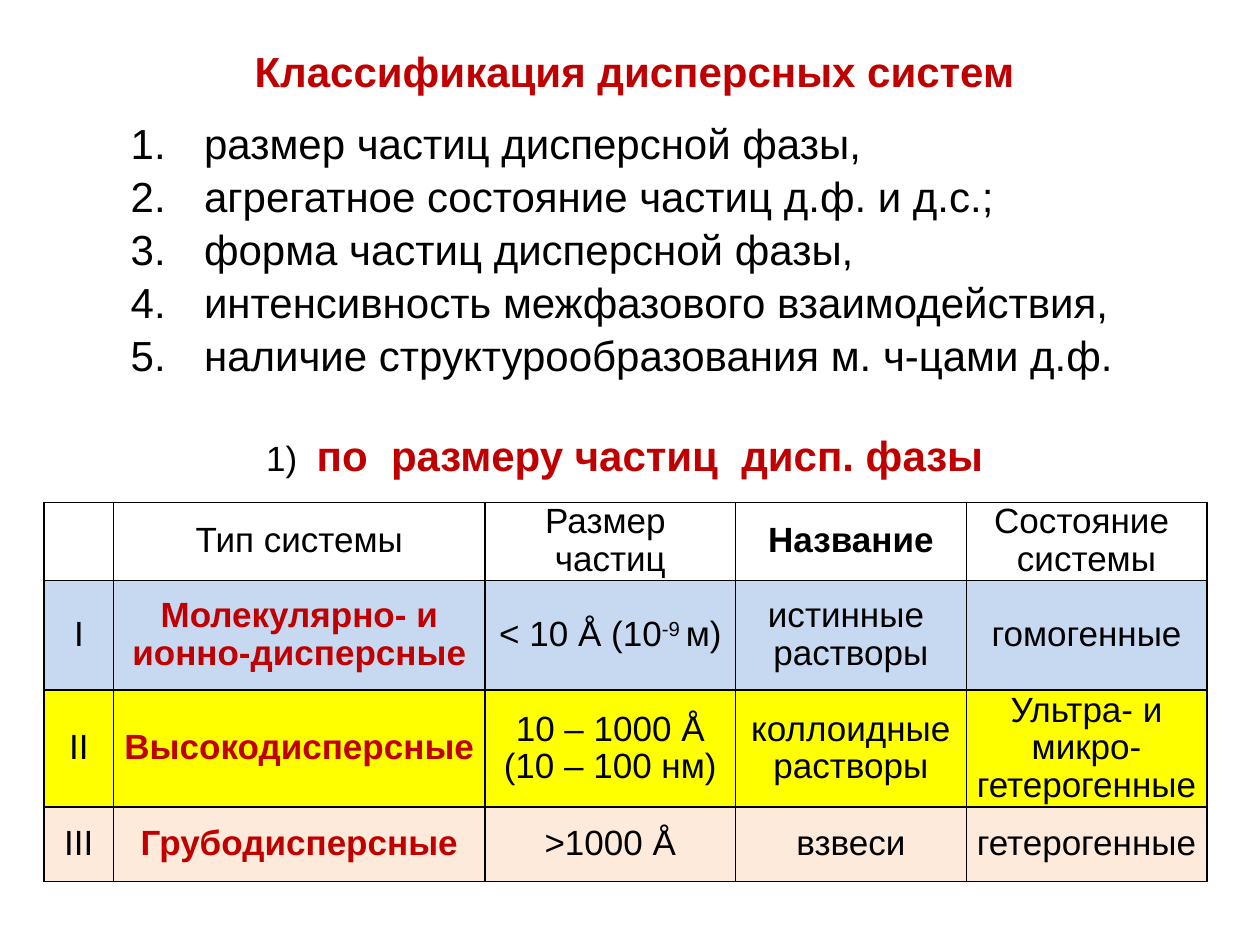
import pptx
import pptx.dml.color
import pptx.enum.text
import pptx.oxml
import pptx.oxml.ns
import pptx.util

Cm = pptx.util.Cm
Pt = pptx.util.Pt
ALIGN = pptx.enum.text.PP_ALIGN
ANCHOR = pptx.enum.text.MSO_ANCHOR
NS = pptx.oxml.ns.nsdecls("a")
RED, BLACK = "C00000", "000000"

LIST = [
    "размер частиц дисперсной фазы, ",
    "агрегатное состояние частиц д.ф. и д.с.;",
    "форма частиц дисперсной фазы, ",
    "интенсивность межфазового взаимодействия, ",
    "наличие структурообразования м. ч-цами д.ф.",
]
WIDTHS = [1.4, 7.49, 5.05, 4.65, 4.85]
ROWS = [
    (1.57, None, ["", "Тип системы", "Размер \nчастиц", "Название",
                  "Состояние \nсистемы"]),
    (2.21, "C6D9F1", ["Ι", "Молекулярно- и ионно-дисперсные",
                      "< 10 Å (10^-9 ^м)", "истинные \nрастворы", "гомогенные"]),
    (2.36, "FFFF00", ["ΙΙ", "Высокодисперсные", "10 – 1000 Å\n(10 – 100 нм)",
                      "коллоидные растворы", "Ультра- и микро-гетерогенные"]),
    (1.5, "FDEADA", ["ΙΙΙ", "Грубодисперсные", ">1000 Å", "взвеси",
                     "гетерогенные"]),
]


def color(code):
    return pptx.dml.color.RGBColor.from_string(code)


def add_run(para, text, size, hue=BLACK, bold=False, sup=False):
    run = para.add_run()
    run.text = text
    font = run.font
    font.name, font.size, font.bold = "Arial", Pt(size), bold
    font.color.rgb = color(hue)
    if sup:
        font._element.set("baseline", "30000")


def place(shape, left, top, width, height):
    shape.left, shape.top = Cm(left), Cm(top)
    shape.width, shape.height = Cm(width), Cm(height)
    frame = shape.text_frame
    frame.word_wrap = True
    frame.auto_size = pptx.enum.text.MSO_AUTO_SIZE.NONE
    frame.vertical_anchor = ANCHOR.TOP
    return frame


def add_title(slide):
    para = place(slide.shapes.title, 0.89, 0.79, 23.8, 1.3).paragraphs[0]
    para.alignment = ALIGN.CENTER
    add_run(para, "Классификация дисперсных систем", 24, RED, True)


def add_list(slide):
    frame = place(slide.placeholders[1], 0.89, 2.2, 23.8, 5.4)
    for num, text in enumerate(LIST):
        para = frame.add_paragraph() if num else frame.paragraphs[0]
        para.alignment = ALIGN.JUSTIFY
        para.space_before = Pt(0)
        para.line_spacing = 1.05
        props = para._p.get_or_add_pPr()
        props.set("marL", str(Cm(2.97)))
        props.set("indent", str(Cm(-1.48)))
        props.append(pptx.oxml.parse_xml(
            f'<a:buFont {NS} typeface="Arial"/>'))
        props.append(pptx.oxml.parse_xml(
            f'<a:buAutoNum {NS} type="arabicPeriod"/>'))
        add_run(para, text, 24)


def add_head(slide):
    box = slide.shapes.add_textbox(0, 0, 0, 0)
    frame = place(box, 2.69, 8.53, 19.81, 1.14)
    frame.vertical_anchor = ANCHOR.MIDDLE
    frame.margin_bottom = 0
    para = frame.paragraphs[0]
    para.alignment = ALIGN.CENTER
    add_run(para, "1)  ", 20)
    add_run(para, "по  размеру частиц  дисп. фазы", 24, RED, True)


def add_edges(cell):
    props = cell._tc.get_or_add_tcPr()
    for side in "LRTB":
        props.append(pptx.oxml.parse_xml(
            f'<a:ln{side} {NS} w="{Pt(1)}"><a:solidFill>'
            f'<a:srgbClr val="{BLACK}"/></a:solidFill></a:ln{side}>'))


def fill_cell(cell, text, fill, hue, bold):
    add_edges(cell)
    if fill:
        cell.fill.solid()
        cell.fill.fore_color.rgb = color(fill)
    else:
        cell.fill.background()
    cell.vertical_anchor = ANCHOR.MIDDLE
    cell.margin_left = cell.margin_right = Cm(0.18)
    cell.margin_top = cell.margin_bottom = 0
    para = cell.text_frame.paragraphs[0]
    para.alignment = ALIGN.CENTER
    para.line_spacing = 0.97
    if not text:
        return
    for row, line in enumerate(text.split("\n")):
        if row:
            para.add_line_break()
        for num, part in enumerate(line.split("^")):
            add_run(para, part, 20, hue, bold, num % 2 == 1)


def add_grid(slide):
    high = sum(row[0] for row in ROWS)
    table = slide.shapes.add_table(
        len(ROWS), len(WIDTHS), Cm(0.89), Cm(10.13),
        Cm(sum(WIDTHS)), Cm(high)).table
    table.first_row = table.horz_banding = False
    for col, width in zip(table.columns, WIDTHS):
        col.width = Cm(width)
    for row, (height, fill, texts) in enumerate(ROWS):
        table.rows[row].height = Cm(height)
        for col, text in enumerate(texts):
            kind = row > 0 and col == 1
            bold = kind or (row == 0 and col == 3)
            fill_cell(table.cell(row, col), text, fill,
                      RED if kind else BLACK, bold)


def main():
    deck = pptx.Presentation()
    deck.slide_width, deck.slide_height = Cm(25.4), Cm(19.05)
    slide = deck.slides.add_slide(deck.slide_layouts[1])
    add_grid(slide)
    add_head(slide)
    add_title(slide)
    add_list(slide)
    deck.save("out.pptx")


if __name__ == "__main__":
    main()
